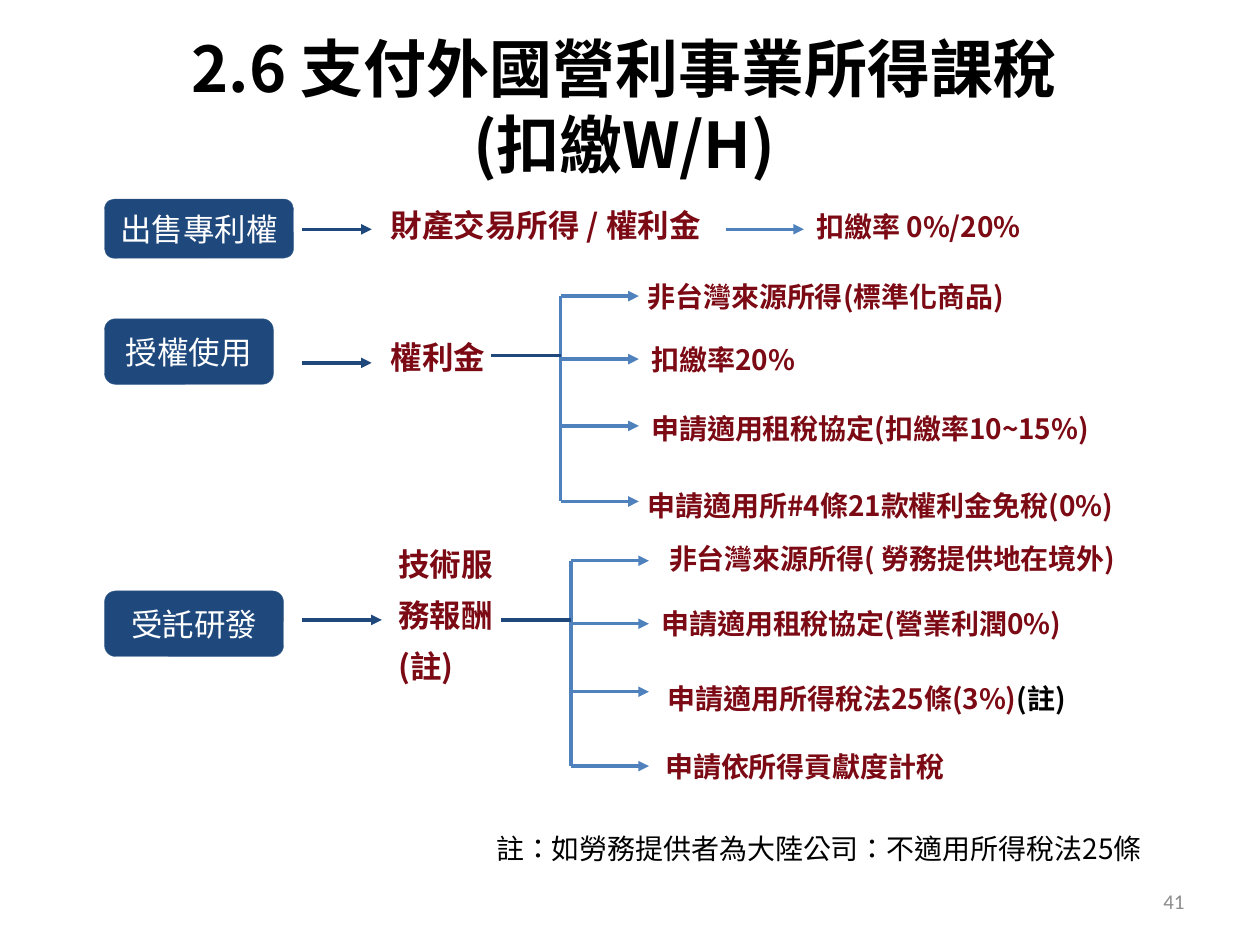
import pptx
import pptx.util
import pptx.dml.color
import pptx.enum.shapes
import pptx.enum.text
import pptx.oxml.ns
import lxml.etree

Inches = pptx.util.Inches
Pt = pptx.util.Pt
Align = pptx.enum.text.PP_ALIGN
Anchor = pptx.enum.text.MSO_ANCHOR
qn = pptx.oxml.ns.qn

NAVY, BLUE, MAROON = "1F497D", "4F81BD", "7B0A14"
BLACK, WHITE, GREY, EDGE = "000000", "FFFFFF", "8C8C8C", "3A5F8C"


def color(value):
    return pptx.dml.color.RGBColor.from_string(value)


class Diagram:
    """Holds the style and the page being drawn."""

    font = "Noto Sans CJK SC"
    language = "zh-TW"

    def __init__(self, page):
        self.page = page

    def style(self, span, size, ink, bold=False, font=None):
        span.font.name = font or self.font
        span.font.size = Pt(size)
        span.font.bold = bold
        span.font.color.rgb = color(ink)
        span.font._element.set("lang", self.language)
        east_asian = lxml.etree.Element(qn("a:ea"), typeface=span.font.name)
        span.font._element.find(qn("a:latin")).addnext(east_asian)

    def style_frame(self, frame, size, ink, bold=False, font=None, align=Align.LEFT):
        frame.vertical_anchor = Anchor.MIDDLE
        for para in frame.paragraphs:
            para.alignment = align
            for span in para.runs:
                self.style(span, size, ink, bold, font)

    def title(self, text, left, top, width, height):
        box = self.page.shapes.title
        box.left, box.top = Inches(left), Inches(top)
        box.width, box.height = Inches(width), Inches(height)
        frame = box.text_frame
        frame.text = text
        frame.auto_size = pptx.enum.text.MSO_AUTO_SIZE.NONE
        self.style_frame(frame, 36, BLACK, bold=True, align=Align.CENTER)

    def text(self, text, left, top, width, height, size, ink, **options):
        box = self.page.shapes.add_textbox(
            Inches(left), Inches(top), Inches(width), Inches(height))
        frame = box.text_frame
        frame.word_wrap = True
        frame.text = text
        self.style_frame(frame, size, ink, **options)
        return frame

    def label(self, text, left, top, width=4.3, height=0.28, size=16):
        frame = self.text(text, left, top, width, height, size, MAROON, bold=True)
        frame.margin_left = frame.margin_right = Inches(0.07)
        frame.margin_top = frame.margin_bottom = 0
        for para in frame.paragraphs[1:]:
            para.space_before = Pt(7.5)
        return frame

    def source(self, text, top, width, height):
        box = self.page.shapes.add_shape(
            pptx.enum.shapes.MSO_SHAPE.ROUNDED_RECTANGLE,
            Inches(0.83), Inches(top), Inches(width), Inches(height))
        box.shadow.inherit = False
        box.fill.solid()
        box.fill.fore_color.rgb = color(NAVY)
        box.line.color.rgb = color(EDGE)
        box.line.width = Pt(0.25)
        box.text_frame.text = text
        self.style_frame(box.text_frame, 18, WHITE, align=Align.CENTER)

    def line(self, x1, y1, x2, y2, ink, arrow=False):
        line = self.page.shapes.add_connector(
            pptx.enum.shapes.MSO_CONNECTOR.STRAIGHT,
            Inches(x1), Inches(y1), Inches(x2), Inches(y2))
        line.line.color.rgb = color(ink)
        line.line.width = Pt(2)
        if arrow:
            lxml.etree.SubElement(line.line._get_or_add_ln(), qn("a:tailEnd"), type="triangle")
        lxml.etree.SubElement(line._element.spPr, qn("a:effectLst"))

    def branches(self, left, stem_left, stem_y, ends):
        """Draw a stem, a trunk in two parts and one arrow for each height in ends."""
        first, _, third, last = ends
        self.line(left, first, left, third, BLUE)
        self.line(left, third, left, last, BLUE)
        for y in ends:
            self.line(left, y, left + 0.62, y, BLUE, arrow=True)
        self.line(stem_left, stem_y, left, stem_y, NAVY)


def main():
    deck = pptx.Presentation()
    deck.slide_width, deck.slide_height = Inches(10), Inches(7.5)
    page = deck.slides.add_slide(deck.slide_layouts[5])
    diagram = Diagram(page)
    diagram.title("2.6 支付外國營利事業所得課稅\v(扣繳W/H)", 0.12, 0.21, 9.67, 1.25)

    for text, top, width, height in (
        ("出售專利權", 1.58, 1.5, 0.47),
        ("授權使用", 2.53, 1.34, 0.52),
        ("受託研發", 4.69, 1.42, 0.52),
    ):
        diagram.source(text, top, width, height)

    for start, end, y, ink in (
        (2.4, 2.95, 1.82, NAVY),
        (5.76, 6.38, 1.82, BLUE),
        (2.4, 2.95, 2.88, NAVY),
        (2.4, 3.03, 4.92, NAVY),
    ):
        diagram.line(start, y, end, y, ink, arrow=True)

    diagram.branches(4.45, 3.9, 2.82, (2.35, 2.85, 3.38, 3.98))
    diagram.branches(4.53, 3.98, 4.92, (4.45, 4.95, 5.49, 6.08))

    diagram.label("財產交易所得 / 權利金", 3.03, 1.23, 2.9, 1.11, size=18)
    diagram.label("權利金", 3.03, 2.28, 1.73, 1.11, size=18)
    diagram.label("技術服\n務報酬\n(註)", 3.09, 4.74, 2.05, size=18)
    diagram.label("扣繳率 0%/20%", 6.41, 1.66, 2.05)

    for text, left, top in (
        ("非台灣來源所得(標準化商品)", 5.07, 2.21),
        ("扣繳率20%", 5.1, 2.71),
        ("申請適用租稅協定(扣繳率10~15%)", 5.1, 3.26),
        ("申請適用所#4條21款權利金免稅(0%)", 5.07, 3.87),
        ("非台灣來源所得( 勞務提供地在境外)", 5.24, 4.29),
        ("申請適用租稅協定(營業利潤0%)", 5.18, 4.81),
        ("申請依所得貢獻度計稅", 5.21, 5.94),
    ):
        diagram.label(text, left, top)

    tax_law = diagram.label("申請適用所得稅法25條(3%)", 5.23, 5.4)
    note_mark = tax_law.paragraphs[0].add_run()
    note_mark.text = "(註)"
    diagram.style(note_mark, 16, BLACK, bold=True)

    diagram.text("註：如勞務提供者為大陸公司：不適用所得稅法25條",
                 3.84, 6.55, 5.77, 0.37, 16, BLACK)
    diagram.text("41", 7.17, 6.95, 2.33, 0.4, 12, GREY, font="Calibri", align=Align.RIGHT)
    deck.save("out.pptx")


if __name__ == "__main__":
    main()
